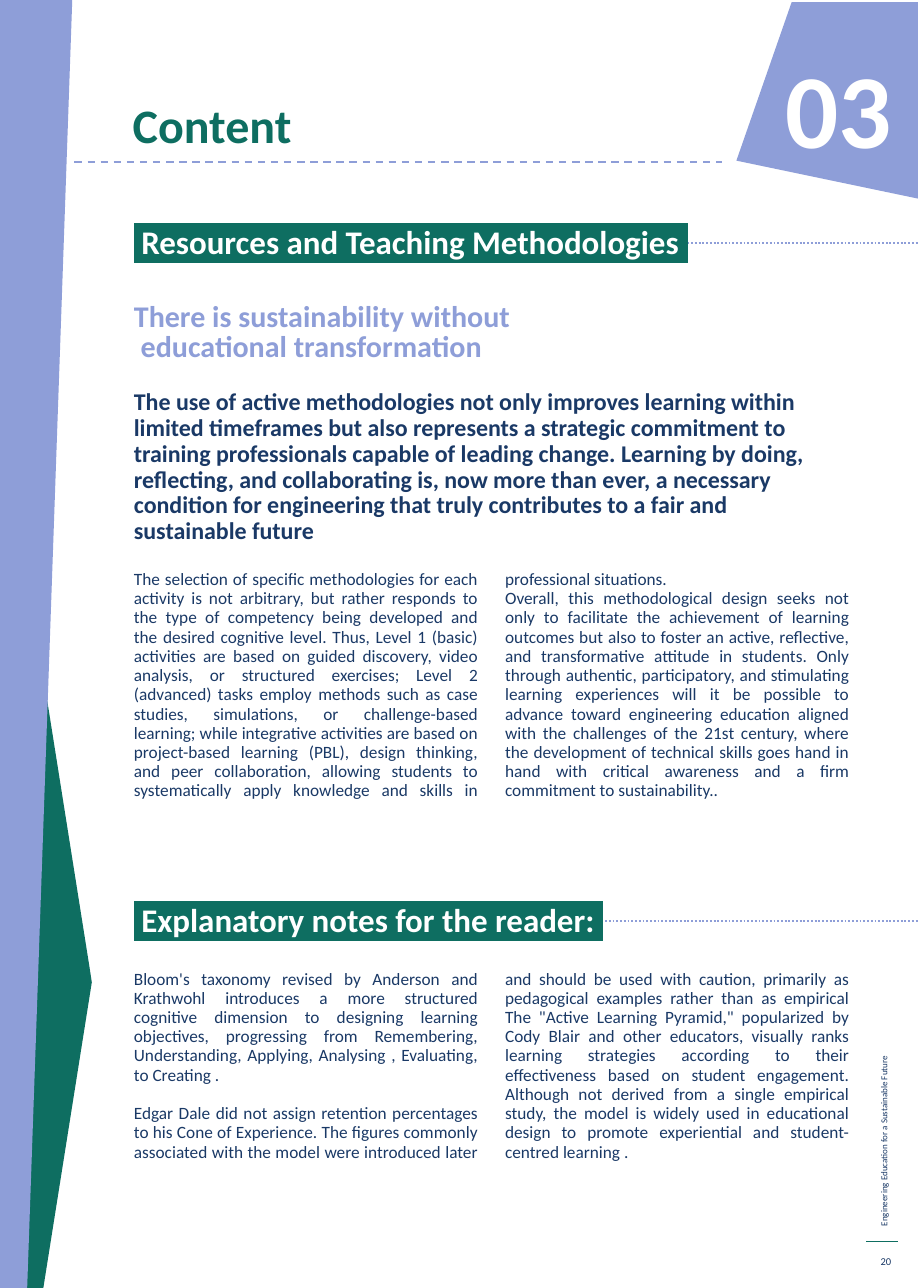
from dataclasses import dataclass

from lxml.etree import SubElement
from pptx import Presentation
from pptx.dml.color import RGBColor
from pptx.enum.dml import MSO_LINE
from pptx.enum.shapes import MSO_CONNECTOR
from pptx.enum.text import MSO_ANCHOR, PP_ALIGN
from pptx.oxml.ns import qn
from pptx.util import Cm, Pt


@dataclass(frozen=True)
class Theme:
    font: str = "Calibri"
    green: str = "0E6E61"
    lilac: str = "8E9ED8"
    navy: str = "1A3966"
    white: str = "FFFFFF"
    number: float = 70
    title: float = 32
    heading: float = 22
    subtitle: float = 20
    lead: float = 16
    body: float = 11.5
    page: float = 7
    side: float = 6


THEME = Theme()
PAGE_WIDTH, PAGE_HEIGHT = 21.59, 30.3

METHODOLOGY_NOTES = [
    "The selection of specific methodologies for each activity is not arbitrary, but rather "
    "responds to the type of competency being developed and the desired cognitive level. Thus, "
    "Level 1 (basic) activities are based on guided discovery, video analysis, or structured "
    "exercises; Level 2 (advanced) tasks employ methods such as case studies, simulations, or "
    "challenge-based learning; while integrative activities are based on project-based learning "
    "(PBL), design thinking, and peer collaboration, allowing students to systematically apply "
    "knowledge and skills in professional situations.",
    "Overall, this methodological design seeks not only to facilitate the achievement of learning "
    "outcomes but also to foster an active, reflective, and transformative attitude in students. "
    "Only through authentic, participatory, and stimulating learning experiences will it be "
    "possible to advance toward engineering education aligned with the challenges of the 21st "
    "century, where the development of technical skills goes hand in hand with critical awareness "
    "and a firm commitment to sustainability..",
]
READER_NOTES = [
    "Bloom's taxonomy revised by Anderson and Krathwohl introduces a more structured cognitive "
    "dimension to designing learning objectives, progressing from Remembering, Understanding, "
    "Applying, Analysing , Evaluating, to Creating .",
    "Edgar Dale did not assign retention percentages to his Cone of Experience. The figures "
    "commonly associated with the model were introduced later and should be used with caution, "
    "primarily as pedagogical examples rather than as empirical The \"Active Learning Pyramid,\" "
    "popularized by Cody Blair and other educators, visually ranks learning strategies according "
    "to their effectiveness based on student engagement. Although not derived from a single "
    "empirical study, the model is widely used in educational design to promote experiential and "
    "student-centred learning .",
]
LEAD = (
    "The use of active methodologies not only improves learning within limited timeframes but "
    "also represents a strategic commitment to training professionals capable of leading change. "
    "Learning by doing, reflecting, and collaborating is, now more than ever, a necessary "
    "condition for engineering that truly contributes to a fair and sustainable future"
)


def add_polygon(slide, color, points):
    corners = [(Cm(x), Cm(y)) for x, y in points]
    builder = slide.shapes.build_freeform(*corners[0])
    builder.add_line_segments(corners[1:], close=True)
    polygon = builder.convert_to_shape()
    polygon.shadow.inherit = False
    polygon.fill.solid()
    polygon.fill.fore_color.rgb = RGBColor.from_string(color)
    polygon.line.fill.background()


def add_rule(slide, left, right, y, color, width, dash=None):
    rule = slide.shapes.add_connector(
        MSO_CONNECTOR.STRAIGHT, Cm(left), Cm(y), Cm(right), Cm(y))
    rule.line.color.rgb = RGBColor.from_string(color)
    rule.line.width = Pt(width)
    if dash:
        rule.line.dash_style = dash
    SubElement(rule._element.spPr, qn("a:effectLst"))


def add_frame(slide, left, top, width, height, anchor=MSO_ANCHOR.TOP):
    box = slide.shapes.add_textbox(Cm(left), Cm(top), Cm(width), Cm(height))
    box.text_frame.word_wrap = True
    box.text_frame.vertical_anchor = anchor
    return box


def add_run(paragraph, text, size, color, bold=False, highlight=None):
    run = paragraph.add_run()
    run.text = text
    run.font.size = Pt(size)
    run.font.bold = bold
    run.font.name = THEME.font
    run.font.color.rgb = RGBColor.from_string(color)
    if highlight:
        properties = run._r.get_or_add_rPr()
        marker = SubElement(properties, qn("a:highlight"))
        SubElement(marker, qn("a:srgbClr")).set("val", highlight)
        properties.find(qn("a:solidFill")).addnext(marker)


def add_label(slide, bounds, text, size, color, bold=False,
              align=PP_ALIGN.LEFT, anchor=MSO_ANCHOR.TOP):
    label = add_frame(slide, *bounds, anchor)
    paragraph = label.text_frame.paragraphs[0]
    paragraph.alignment = align
    add_run(paragraph, text, size, color, bold)
    return label


def add_paragraph(frame, index, text, size, color, leading, before=0,
                  bold=False, align=PP_ALIGN.LEFT):
    paragraph = frame.add_paragraph() if index else frame.paragraphs[0]
    paragraph.alignment = align
    paragraph.line_spacing = Pt(leading)
    if before:
        paragraph.space_before = Pt(before)
    paragraph._p.get_or_add_pPr().set("marL", str(Cm(0.03)))
    add_run(paragraph, text, size, color, bold)


def add_heading(slide, top, text):
    add_rule(slide, 6.4, PAGE_WIDTH, top + 0.64, THEME.lilac, 1.25, MSO_LINE.ROUND_DOT)
    heading = add_frame(slide, 2.9, top, 16.87, 1.65)
    paragraph = heading.text_frame.paragraphs[0]
    paragraph.alignment = PP_ALIGN.JUSTIFY
    for part, color in ((" " + text, THEME.white), (".", THEME.green)):
        add_run(paragraph, part, THEME.heading, color, True, THEME.green)


def add_columns(slide, top, notes, gap=0):
    frame = add_frame(slide, 2.87, top, 17.35, 3).text_frame
    layout = frame._txBody.bodyPr
    layout.set("numCol", "2")
    layout.set("spcCol", str(Cm(0.61)))
    for index, note in enumerate(notes):
        add_paragraph(frame, index, note, THEME.body, THEME.navy, 12.8,
                      before=gap * index, align=PP_ALIGN.JUSTIFY)


def add_introduction(slide):
    frame = add_frame(slide, 2.87, 7.01, 16.87, 6.48).text_frame
    subtitle = ("There is sustainability without", " educational transformation")
    for index, text in enumerate(subtitle):
        add_paragraph(frame, index, text, THEME.subtitle, THEME.lilac, 20.2, bold=True)
    add_paragraph(frame, len(subtitle), LEAD, THEME.lead, THEME.navy, 17.2,
                  before=17.2, bold=True)


def add_page_footer(slide):
    side_title = add_label(slide, (15.09, 23.14, 11.4, 0.51),
                           "Engineering Education for a Sustainable Future",
                           THEME.side, THEME.navy)
    side_title.rotation = 270
    add_rule(slide, 20.37, 21.13, 29.21, THEME.green, 0.75)
    add_label(slide, (20.37, 29.31, 0.84, 0.74), "20", THEME.page, THEME.navy,
              align=PP_ALIGN.RIGHT, anchor=MSO_ANCHOR.MIDDLE)


def add_page_header(slide):
    add_polygon(slide, THEME.lilac, [
        (21.77, 0.05), (18.62, 0.05), (17.32, 3.78), (21.72, 4.7)])
    title = add_label(slide, (2.87, 2.67, 11.38, 1.96), "Content", THEME.title,
                      THEME.green, True, anchor=MSO_ANCHOR.BOTTOM)
    title.text_frame.margin_top = 0
    title.text_frame.margin_bottom = Cm(1.1)
    title.text_frame.paragraphs[0].line_spacing = 0.74
    add_label(slide, (16.66, 0.89, 4.57, 3.61), "03", THEME.number, THEME.white, True,
              align=PP_ALIGN.RIGHT)
    add_rule(slide, 1.75, 16.97, 3.81, THEME.lilac, 1.25, MSO_LINE.DASH)


def main():
    presentation = Presentation()
    presentation.slide_width = Cm(PAGE_WIDTH)
    presentation.slide_height = Cm(PAGE_HEIGHT)
    slide = presentation.slides.add_slide(presentation.slide_layouts[6])
    add_page_footer(slide)
    add_polygon(slide, THEME.green, [
        (1.02, PAGE_HEIGHT), (0.58, PAGE_HEIGHT), (0.58, 13.13), (2.11, 22.78), (2.16, 23.11)])
    add_polygon(slide, THEME.lilac, [
        (0, 0), (1.7, 0), (0.64, PAGE_HEIGHT), (0, PAGE_HEIGHT)])
    add_page_header(slide)
    add_introduction(slide)
    add_heading(slide, 5.08, "Resources and Teaching Methodologies")
    add_columns(slide, 13.28, METHODOLOGY_NOTES)
    add_heading(slide, 21.03, "Explanatory notes for the reader:")
    add_columns(slide, 22.68, READER_NOTES, gap=12.8)
    presentation.save("out.pptx")


if __name__ == "__main__":
    main()
